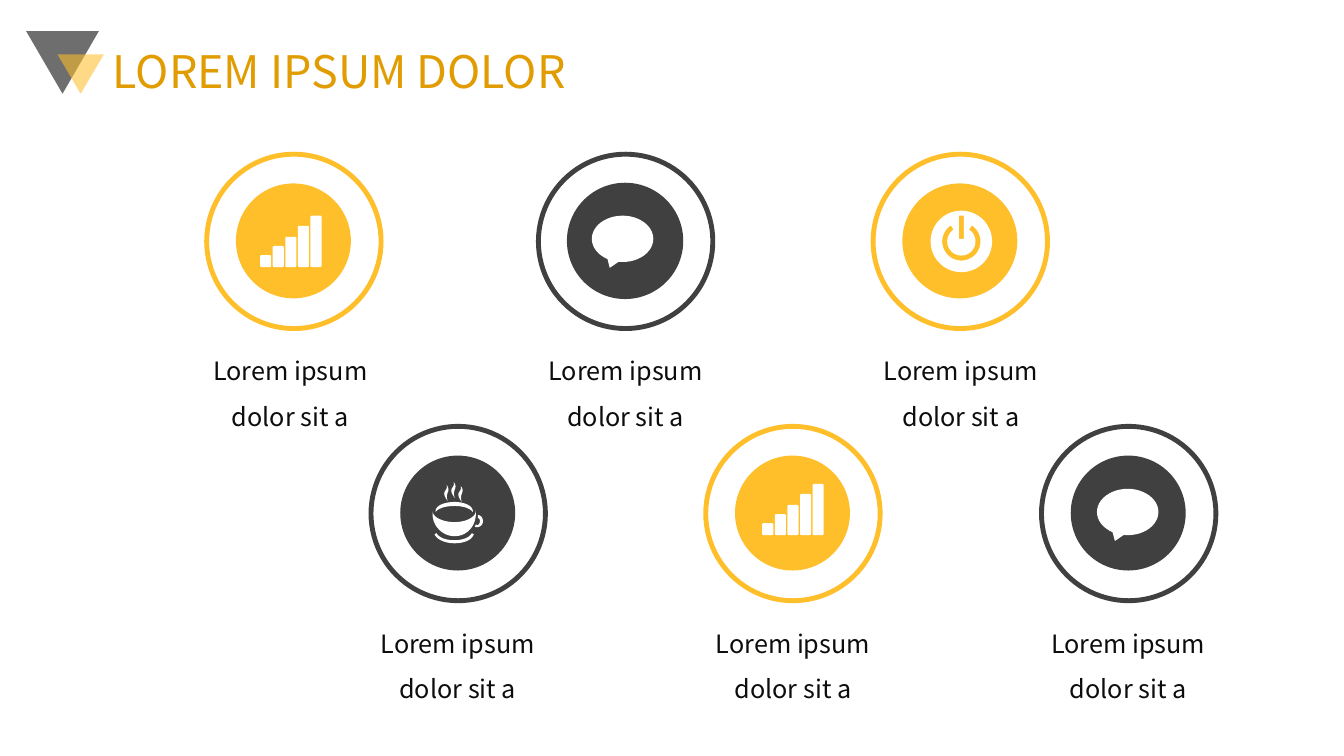
from math import cos, pi, sin

from lxml import etree
from pptx import Presentation
from pptx.dml.color import RGBColor
from pptx.enum.shapes import MSO_SHAPE
from pptx.enum.text import MSO_ANCHOR, PP_ALIGN
from pptx.oxml.ns import qn
from pptx.util import Inches, Pt

OVAL = MSO_SHAPE.OVAL
TRIANGLE = MSO_SHAPE.ISOSCELES_TRIANGLE
BUBBLE = MSO_SHAPE.OVAL_CALLOUT
LEFT, CENTER = PP_ALIGN.LEFT, PP_ALIGN.CENTER
TOP, MIDDLE = MSO_ANCHOR.TOP, MSO_ANCHOR.MIDDLE

GOLD = RGBColor(0xFF, 0xBF, 0x2B)
AMBER = RGBColor(0xE0, 0x9C, 0x00)
DARK = RGBColor(0x40, 0x40, 0x40)
INK = RGBColor(0x0D, 0x0D, 0x0D)
BLACK = RGBColor(0, 0, 0)
WHITE = RGBColor(0xFF, 0xFF, 0xFF)

# Cup outlines in hundredths of an inch: a start, then cubic curves
STEAM = [(0, 0), (5, 7, -2, 7, 1, 16), (-7, 5, 2, 7, 0, 0)]
CUP = [
    # saucer
    [(4, 51), (6, 55, 13, 58, 22, 58), (30, 58, 37, 55, 39, 51),
     (39, 51, 41, 52, 41, 52), (39, 58, 31, 61, 22, 61),
     (12, 61, 4, 57, 2, 52)],
    # handle
    [(45, 33), (48, 33, 50, 36, 50, 39), (50, 43, 47, 45, 44, 45),
     (43, 45, 42, 45, 42, 45), (42, 44, 43, 43, 43, 42),
     (43, 42, 44, 43, 44, 43), (46, 43, 47, 41, 47, 39),
     (47, 37, 46, 36, 45, 36), (45, 35, 45, 34, 45, 33)],
    # bowl
    [(43, 28), (43, 29, 43, 31, 43, 32), (43, 44, 34, 54, 22, 54),
     (10, 54, 0, 44, 0, 32), (0, 31, 0, 30, 0, 29),
     (0, 35, 10, 40, 22, 40), (33, 40, 43, 35, 43, 29)],
    # rim
    [(22, 20), (32, 20, 40, 24, 40, 29), (40, 29, 40, 30, 40, 30),
     (37, 26, 30, 24, 22, 24), (13, 24, 6, 26, 3, 30),
     (3, 30, 3, 29, 3, 29), (3, 24, 11, 20, 22, 20)],
]


def bend(curve, dx=0, dy=0, steps=10):
    """Turn a chain of cubic curves into points in inches."""
    spot = curve[0]
    points = [spot]
    for ax, ay, bx, by, ex, ey in curve[1:]:
        for i in range(1, steps + 1):
            t = i / steps
            u = 1 - t
            points.append(tuple(
                u**3 * s + 3 * u * u * t * a + 3 * u * t * t * b + t**3 * e
                for s, a, b, e in zip(spot, (ax, bx * 0 + ay), (bx, by), (ex, ey))))
        spot = ex, ey
    return [((x + dx) / 100, (y + dy) / 100) for x, y in points]


def arc(radius, start, end, mid=0.305, steps=60):
    """Points on a circle, with angles clockwise from the top."""
    turns = [start + (end - start) * i / steps for i in range(steps + 1)]
    return [(mid + radius * sin(a), mid - radius * cos(a)) for a in turns]


def bar(x, y, wide, base, cut=0.01):
    """A bar with trimmed corners."""
    right = x + wide
    return [(x + cut, y), (right - cut, y), (right, y + cut),
            (right, base - cut), (right - cut, base), (x + cut, base),
            (x, base - cut), (x, y + cut)]


class Deck:
    font = "Noto Sans CJK JP"

    def __init__(self):
        self.show = Presentation()
        self.show.slide_width = Inches(13.33)
        self.show.slide_height = Inches(7.5)
        self.slide = self.show.slides.add_slide(self.show.slide_layouts[6])

    def paint(self, shape, fill=None, line=None, width=1):
        shape.shadow.inherit = False
        if fill is None:
            shape.fill.background()
        else:
            shape.fill.solid()
            shape.fill.fore_color.rgb = fill
        if line is None:
            shape.line.fill.background()
        else:
            shape.line.color.rgb = line
            shape.line.width = Pt(width)
        return shape

    def shape(self, kind, x, y, w, h, **style):
        item = self.slide.shapes.add_shape(
            kind, Inches(x), Inches(y), Inches(w), Inches(h))
        return self.paint(item, **style)

    def marker(self, x, y, w, h, color):
        item = self.shape(TRIANGLE, x, y, w, h, fill=color)
        item.rotation = 180
        tint = item.fill._xPr.find(".//" + qn("a:srgbClr"))
        etree.SubElement(tint, qn("a:alpha"), val="57000")

    def outline(self, x, y, loops):
        loops = [[(Inches(a), Inches(b)) for a, b in loop] for loop in loops]
        pen = self.slide.shapes.build_freeform(*loops[0][0])
        for i, loop in enumerate(loops):
            if i:
                pen.move_to(*loop[0])
            pen.add_line_segments(loop[1:], close=True)
        self.paint(pen.convert_to_shape(Inches(x), Inches(y)), fill=WHITE)

    def text(self, x, y, w, h, words, size, color, align, anchor, lead):
        box = self.slide.shapes.add_textbox(
            Inches(x), Inches(y), Inches(w), Inches(h))
        frame = box.text_frame
        frame.word_wrap = True
        frame.vertical_anchor = anchor
        para = frame.paragraphs[0]
        para.alignment = align
        para.line_spacing = lead
        run = para.add_run()
        run.text = words
        run.font.name = self.font
        run.font.size = Pt(size)
        run.font.color.rgb = color

    # Icons
    def bars(self, x, y):
        tall = (0.12, 0.21, 0.3, 0.41, 0.51)
        self.outline(x, y, [bar(0.125 * i, 0.51 - h, 0.11, 0.51)
                            for i, h in enumerate(tall)])

    def chat(self, x, y):
        self.shape(BUBBLE, x, y, 0.61, 0.46, fill=WHITE)

    def power(self, x, y):
        gap = 0.58
        ring = arc(0.19, gap, 2 * pi - gap) + arc(0.14, 2 * pi - gap, gap)
        slot = [(0.28, 0.05), (0.33, 0.05), (0.33, 0.28), (0.28, 0.28)]
        self.outline(x, y, [arc(0.305, 0, 2 * pi), ring, slot])

    def cup(self, x, y):
        puffs = [bend(STEAM, *at) for at in ((28, 4), (14, 3), (21, 0))]
        self.outline(x, y, [bend(part) for part in CUP] + puffs)

    def badge(self, x, y, color, edge, icon, label):
        self.shape(OVAL, x, y, 1.73, 1.73, line=color, width=3.5)
        self.shape(OVAL, x + 0.29, y + 0.29, 1.14, 1.14, fill=color, line=edge)
        draw, left, top = icon
        draw(left, top)
        self.text(label, y + 1.8, 2.08, 0.97, "Lorem ipsum dolor sit a",
                  18, INK, CENTER, TOP, 1.5)


def main():
    deck = Deck()

    # Title with its two markers
    deck.marker(0.26, 0.31, 0.72, 0.62, BLACK)
    deck.marker(0.57, 0.54, 0.46, 0.39, GOLD)
    deck.text(1.02, 0.31, 11.5, 0.85, "LOREM IPSUM DOLOR",
              32, AMBER, LEFT, MIDDLE, 0.9)

    # Two staggered rows of badges
    rows = [
        (1.84, 1.53, [(2.05, GOLD, None, (deck.bars, 2.58, 2.14)),
                      (5.34, DARK, DARK, (deck.chat, 5.87, 2.14)),
                      (8.66, GOLD, None, (deck.power, 9.23, 2.09))]),
        (3.5, 4.23, [(3.68, DARK, None, (deck.cup, 4.29, 4.78)),
                     (7, GOLD, None, (deck.bars, 7.56, 4.8)),
                     (10.33, DARK, None, (deck.chat, 10.88, 4.85))]),
    ]
    for start, y, badges in rows:
        for i, (x, color, edge, icon) in enumerate(badges):
            deck.badge(x, y, color, edge, icon, start + 3.325 * i)

    deck.show.save("out.pptx")


if __name__ == "__main__":
    main()
